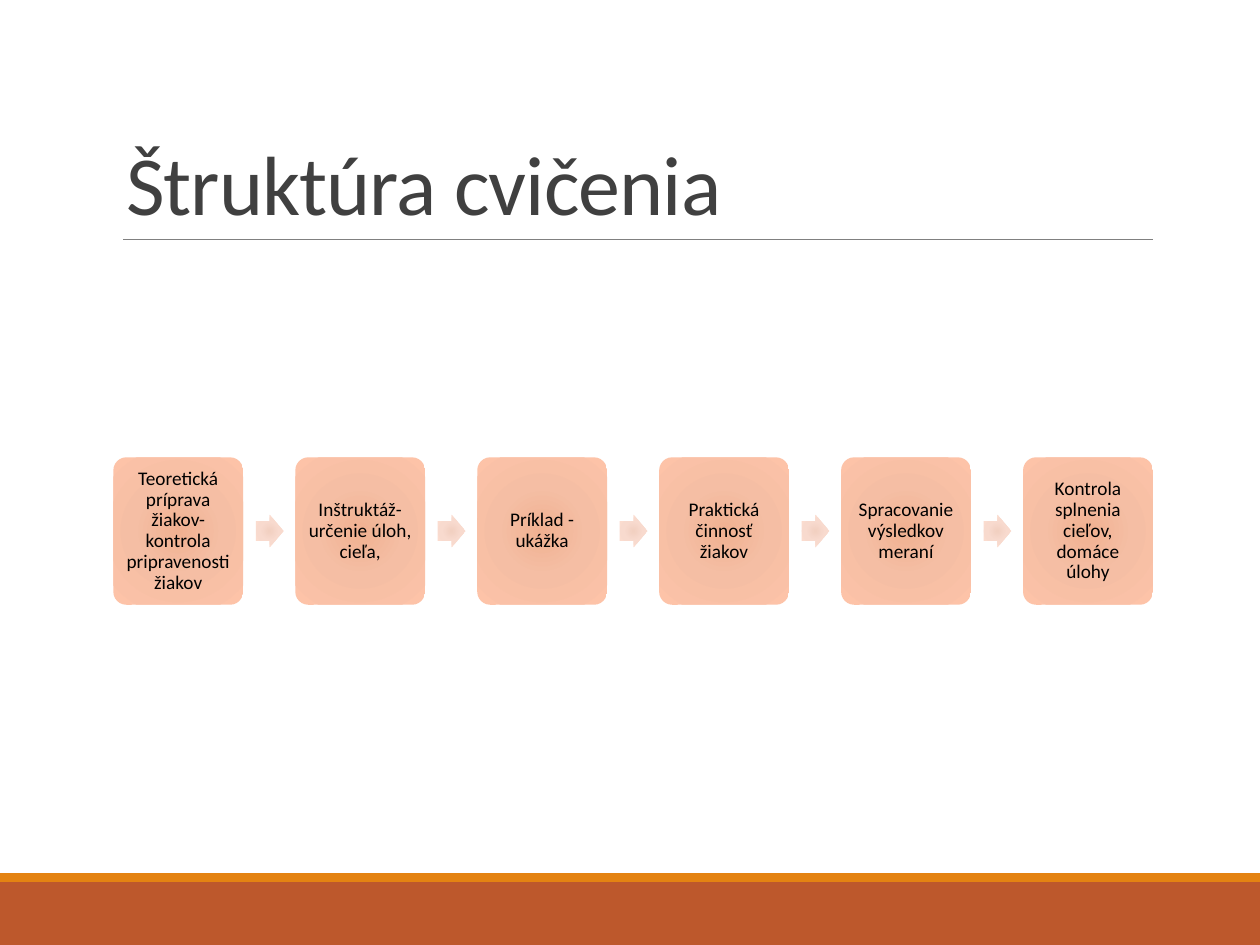
from dataclasses import dataclass

from lxml import etree
from pptx import Presentation
from pptx.dml.color import RGBColor
from pptx.enum.shapes import MSO_CONNECTOR, MSO_SHAPE
from pptx.enum.text import MSO_ANCHOR, MSO_AUTO_SIZE, PP_ALIGN
from pptx.oxml import parse_xml
from pptx.oxml.ns import nsdecls, qn
from pptx.util import Inches, Pt

RECTANGLE = MSO_SHAPE.RECTANGLE
ROUNDED = MSO_SHAPE.ROUNDED_RECTANGLE
ARROW = MSO_SHAPE.RIGHT_ARROW

FONT = "Calibri"
COLORS = {
    "title": "404040",
    "rule": "808080",
    "text": "000000",
    "band": "BD582C",
    "stripe": "E48312",
}
STEP_GRADIENT = {0: "F0B191", 45: "F5BEA4", 100: "FDC3A8"}
ARROW_GRADIENT = {0: "F2D0C1", 45: "F8DACE", 100: "FDDDD0"}

STEPS = [
    "Teoretická príprava žiakov- kontrola pripravenosti žiakov",
    "Inštruktáž- určenie úloh, cieľa,",
    "Príklad - ukážka",
    "Praktická činnosť žiakov",
    "Spracovanie výsledkov meraní",
    "Kontrola splnenia cieľov, domáce úlohy",
]


@dataclass(frozen=True)
class Area:
    """A rectangle in inches."""

    left: float
    top: float
    width: float
    height: float

    def lengths(self) -> list:
        return [Inches(v) for v in (self.left, self.top, self.width, self.height)]


SLIDE = Area(0, 0, 10, 7.5)
TITLE = Area(0.9, 0.31, 8.25, 1.59)
STEP = Area(TITLE.left, 3.63, 1.03, 1.17)
ARROW_WIDTH, ARROW_HEIGHT, ARROW_GAP = 0.22, 0.26, 0.1
PITCH = (TITLE.width - STEP.width) / (len(STEPS) - 1)
BAND_TOP, STRIPE_HEIGHT = 7, 0.07


def rgb(name: str) -> RGBColor:
    return RGBColor.from_string(COLORS[name])


def add_plain_shape(page, kind, area: Area):
    shape = page.shapes.add_shape(kind, *area.lengths())
    shape.shadow.inherit = False
    shape.line.fill.background()
    return shape


def add_band(page, area: Area, color: str) -> None:
    band = add_plain_shape(page, RECTANGLE, area)
    band.fill.solid()
    band.fill.fore_color.rgb = rgb(color)


def fill_radially(shape, stops: dict) -> None:
    gradient = parse_xml(f'<a:gradFill {nsdecls("a")} rotWithShape="1"/>')
    stop_list = etree.SubElement(gradient, qn("a:gsLst"))
    for position, color in stops.items():
        stop = etree.SubElement(stop_list, qn("a:gs"), pos=str(position * 1000))
        etree.SubElement(stop, qn("a:srgbClr"), val=color)
    circle = etree.SubElement(gradient, qn("a:path"), path="circle")
    etree.SubElement(circle, qn("a:fillToRect"), {side: "100000" for side in "ltrb"})
    shape.element.spPr.find(qn("a:prstGeom")).addnext(gradient)


def add_title(page, text: str) -> None:
    title = page.shapes.title
    title.left, title.top, title.width, title.height = TITLE.lengths()
    frame = title.text_frame
    frame.text = text
    frame.auto_size = MSO_AUTO_SIZE.NONE
    frame.vertical_anchor = MSO_ANCHOR.BOTTOM
    para = frame.paragraphs[0]
    para.alignment = PP_ALIGN.LEFT
    para.line_spacing = 0.85
    para.font.name, para.font.size = FONT, Pt(48)
    para.font.color.rgb = rgb("title")
    para.runs[0].font._element.set("spc", "-50")


def add_title_rule(page) -> None:
    bottom = Inches(TITLE.top + TITLE.height)
    rule = page.shapes.add_connector(
        MSO_CONNECTOR.STRAIGHT, Inches(0.98), bottom, Inches(TITLE.left + TITLE.width), bottom
    )
    rule.line.color.rgb = rgb("rule")
    rule.line.width = Pt(0.5)
    etree.SubElement(rule.element.spPr, qn("a:effectLst"))


def add_step(page, column: int, text: str) -> None:
    area = Area(STEP.left + column * PITCH, STEP.top, STEP.width, STEP.height)
    box = add_plain_shape(page, ROUNDED, area)
    box.adjustments[0] = 0.1
    fill_radially(box, STEP_GRADIENT)
    frame = box.text_frame
    frame.word_wrap = True
    frame.vertical_anchor = MSO_ANCHOR.MIDDLE
    frame.margin_left = frame.margin_right = Inches(0.05)
    frame.margin_top = frame.margin_bottom = Inches(0.05)
    frame.text = text
    para = frame.paragraphs[0]
    para.alignment = PP_ALIGN.CENTER
    para.line_spacing = 0.9
    para.font.name, para.font.size = FONT, Pt(11)
    para.font.color.rgb = rgb("text")


def add_arrow_after(page, column: int) -> None:
    left = STEP.left + column * PITCH + STEP.width + ARROW_GAP
    top = STEP.top + (STEP.height - ARROW_HEIGHT) / 2
    arrow = add_plain_shape(page, ARROW, Area(left, top, ARROW_WIDTH, ARROW_HEIGHT))
    arrow.adjustments[0], arrow.adjustments[1] = 0.6, 0.5
    fill_radially(arrow, ARROW_GRADIENT)


def main() -> None:
    deck = Presentation()
    deck.slide_width, deck.slide_height = Inches(SLIDE.width), Inches(SLIDE.height)
    page = deck.slides.add_slide(deck.slide_layouts.get_by_name("Title Only"))
    add_band(page, Area(0, BAND_TOP, SLIDE.width, SLIDE.height - BAND_TOP), "band")
    add_band(page, Area(0, BAND_TOP - STRIPE_HEIGHT, SLIDE.width, STRIPE_HEIGHT), "stripe")
    add_title_rule(page)
    add_title(page, "Štruktúra cvičenia")
    for column, text in enumerate(STEPS):
        add_step(page, column, text)
        if column < len(STEPS) - 1:
            add_arrow_after(page, column)
    deck.save("out.pptx")


if __name__ == "__main__":
    main()
